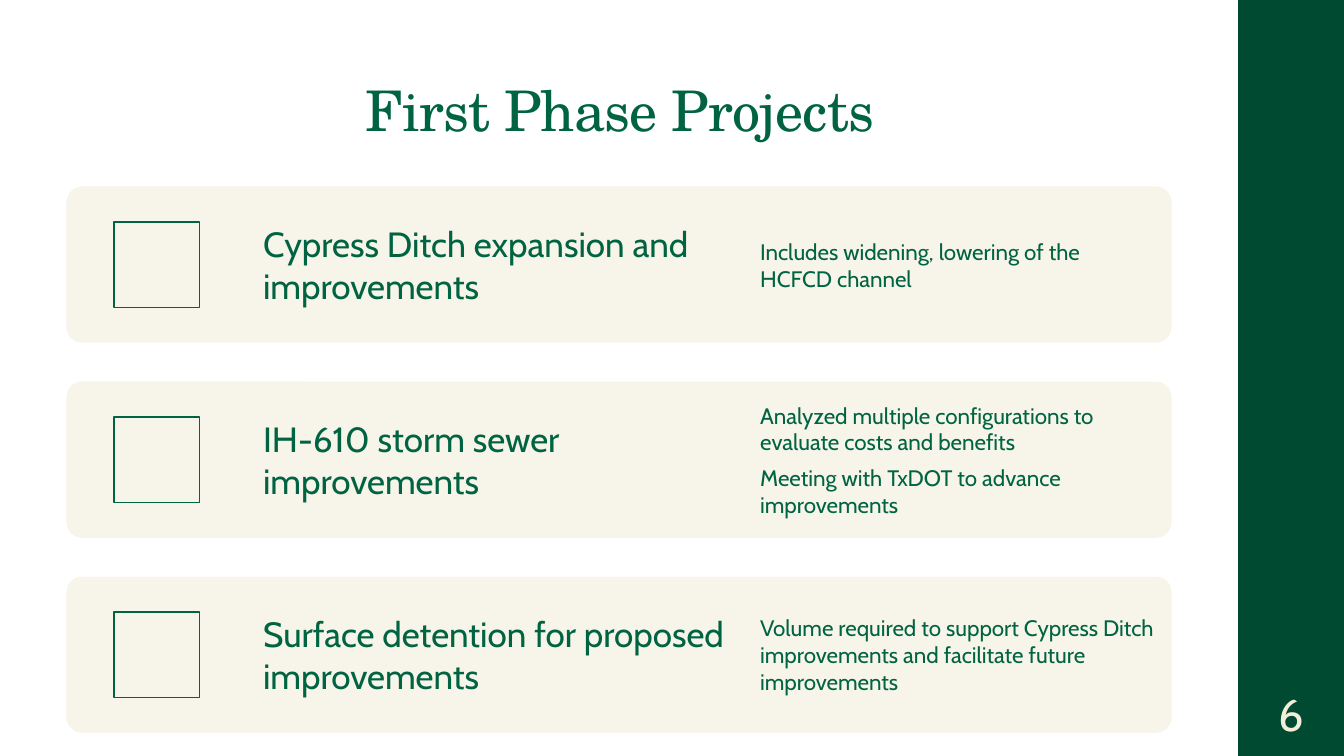
from pptx import Presentation
from pptx import util as u
from pptx.dml.color import RGBColor
from pptx.enum import shapes, text

HUES = {"dark": "004A31", "green": "006341", "cream": "F7F4E9", "pale": "F3EEDA"}

deck = Presentation()
deck.slide_width, deck.slide_height = u.Inches(13.33), u.Inches(7.5)
slide = deck.slides.add_slide(deck.slide_layouts[5])


def write(box, lines, size, hue="green", font="Cabin", align="LEFT",
          inset=(0.16, 0.16), after=0, track=0):
    frame = box.text_frame
    frame.word_wrap = True
    frame.auto_size = text.MSO_AUTO_SIZE.NONE
    frame.vertical_anchor = text.MSO_ANCHOR.MIDDLE
    frame.margin_left = frame.margin_right = u.Inches(inset[0])
    frame.margin_top = frame.margin_bottom = u.Inches(inset[1])
    for i, line in enumerate(lines):
        para = frame.add_paragraph() if i else frame.paragraphs[0]
        para.alignment = getattr(text.PP_ALIGN, align)
        para.space_before, para.space_after = u.Pt(0), u.Pt(after)
        run = para.add_run()
        run.text = line
        run.font.size, run.font.name = u.Pt(size), font
        run.font.color.rgb = RGBColor.from_string(HUES[hue])
        if track:
            run.font.bold = False
            run._r.get_or_add_rPr().set("spc", str(track))


def block(kind, left, top, width, height, fill=None, line=None):
    form = slide.shapes.add_shape(
        kind, u.Inches(left), u.Inches(top), u.Inches(width), u.Inches(height))
    form.shadow.inherit = False
    if fill:
        form.fill.solid()
        form.fill.fore_color.rgb = RGBColor.from_string(HUES[fill])
    else:
        form.fill.background()
    if line:
        form.line.color.rgb = RGBColor.from_string(HUES[line])
        form.line.width = u.Pt(1.1)
    else:
        form.line.fill.background()
    return form


# Side band
block(shapes.MSO_SHAPE.RECTANGLE, 12.28, 0, 1.05, 7.5, fill="dark")

# Title
title = slide.shapes.title
title.left, title.top = u.Inches(0.32), u.Inches(0.4)
title.width, title.height = u.Inches(11.66), u.Inches(1.45)
write(title, ["First Phase Projects"], 40, font="TeX Gyre Schola",
      align="CENTER", inset=(0.1, 0.05), track=-50)
title.text_frame.paragraphs[0].line_spacing = 0.9

# Project cards
CARDS = [
    ("Cypress Ditch expansion and improvements",
     ["Includes widening, lowering of the HCFCD channel"]),
    ("IH-610 storm sewer improvements",
     ["Analyzed multiple configurations to evaluate costs and benefits",
      "Meeting with TxDOT to advance improvements"]),
    ("Surface detention for proposed improvements",
     ["Volume required to support Cypress Ditch improvements "
      "and facilitate future improvements"]),
]
TOP, STEP, HIGH, SIDE = 1.85, 1.935, 1.55, 0.85
for i, (name, notes) in enumerate(CARDS):
    top = TOP + i * STEP
    card = block(shapes.MSO_SHAPE.ROUNDED_RECTANGLE, 0.66, top, 10.96, HIGH, fill="cream")
    card.adjustments[0] = 0.1
    block(shapes.MSO_SHAPE.RECTANGLE, 1.13, top + (HIGH - SIDE) / 2, SIDE, SIDE, line="green")
    for left, width, lines, size in ((2.45, 4.93, [name], 25), (7.38, 4.24, notes, 16)):
        box = slide.shapes.add_textbox(
            u.Inches(left), u.Inches(top), u.Inches(width), u.Inches(HIGH))
        write(box, lines, size, after=6)

# Page number
page = slide.shapes.add_textbox(u.Inches(12.31), u.Inches(6.75), u.Inches(1), u.Inches(0.65))
write(page, ["6"], 32, hue="pale", align="CENTER", inset=(0.03, 0.05))

deck.save("out.pptx")
